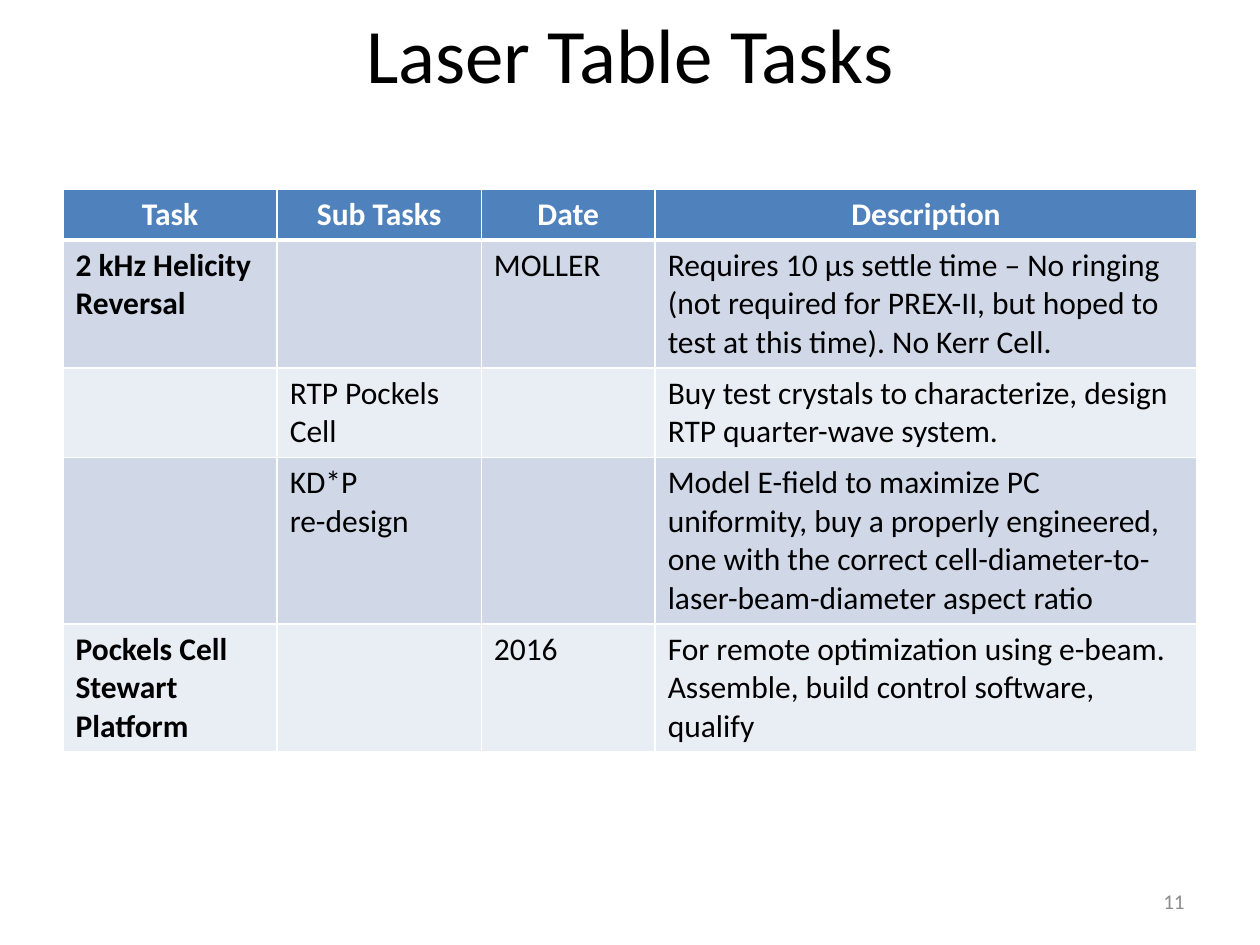
from lxml.etree import SubElement
from pptx import Presentation
from pptx.dml.color import RGBColor
from pptx.enum.text import MSO_ANCHOR, PP_ALIGN
from pptx.oxml.ns import qn
from pptx.util import Inches, Pt

TITLE = "Laser Table Tasks"
SLIDE_NUMBER = "11"
COLUMN_WIDTHS = [1.7, 1.62, 1.38, 4.3]
ROW_HEIGHTS = [0.39, 0.83, 0.51, 1.28, 0.73]
ROWS = [
    ["Task", "Sub Tasks", "Date", "Description"],
    ["2 kHz Helicity Reversal", "", "MOLLER",
     "Requires 10 µs settle time – No ringing\n"
     "(not required for PREX-II, but hoped to test at this time). No Kerr Cell."],
    ["", "RTP Pockels Cell", "",
     "Buy test crystals to characterize, design RTP quarter-wave system."],
    ["", "KD*P\nre-design", "",
     "Model E-field to maximize PC uniformity, buy a properly engineered, "
     "one with the correct cell-diameter-to-laser-beam-diameter aspect ratio"],
    ["Pockels Cell Stewart Platform", "", "2016",
     "For remote optimization using e-beam.\nAssemble, build control software, qualify"],
]
HEADER_FILL = "4F81BD"
BAND_FILLS = ["D0D8E8", "E9EDF4"]
BORDER_COLOR = "FFFFFF"
TITLE_FORMAT = {"size": Pt(44), "name": "Calibri", "bold": False}
CELL_FORMAT = {"size": Pt(18), "name": "Calibri"}
NUMBER_FORMAT = {"size": Pt(12), "name": "Calibri"}


def color(value):
    return RGBColor.from_string(value)


def write_text(text_frame, text, text_color, alignment, font_format):
    text_frame.text = text
    for paragraph in text_frame.paragraphs:
        paragraph.alignment = alignment
        paragraph.font.color.rgb = color(text_color)
        for name, value in font_format.items():
            setattr(paragraph.font, name, value)


def add_borders(cell, bottom_width, top_width):
    properties = cell._tc.get_or_add_tcPr()
    widths = {"a:lnL": 1, "a:lnR": 1, "a:lnT": top_width, "a:lnB": bottom_width}
    for tag, width in widths.items():
        line = SubElement(properties, qn(tag), w=str(Pt(width)))
        fill = SubElement(line, qn("a:solidFill"))
        SubElement(fill, qn("a:srgbClr"), val=BORDER_COLOR)


def add_title(slide):
    title = slide.shapes.title
    box = {"left": 0.5, "top": 0, "width": 9, "height": 0.83}
    for name, value in box.items():
        setattr(title, name, Inches(value))
    title.text_frame.vertical_anchor = MSO_ANCHOR.MIDDLE
    write_text(title.text_frame, TITLE, "000000", PP_ALIGN.CENTER, TITLE_FORMAT)


def add_task_table(slide):
    table = slide.shapes.add_table(
        len(ROWS), len(COLUMN_WIDTHS), Inches(0.5), Inches(1.5),
        Inches(sum(COLUMN_WIDTHS)), Inches(sum(ROW_HEIGHTS))).table
    for column, width in zip(table.columns, COLUMN_WIDTHS):
        column.width = Inches(width)
    for row, height in zip(table.rows, ROW_HEIGHTS):
        row.height = Inches(height)
    for row_index, texts in enumerate(ROWS):
        header = row_index == 0
        fill = HEADER_FILL if header else BAND_FILLS[(row_index - 1) % 2]
        for column_index, text in enumerate(texts):
            cell = table.cell(row_index, column_index)
            add_borders(cell, 3 if header else 1, 3 if row_index == 1 else 1)
            cell.fill.solid()
            cell.fill.fore_color.rgb = color(fill)
            write_text(cell.text_frame, text,
                       "FFFFFF" if header else "000000",
                       PP_ALIGN.CENTER if header else PP_ALIGN.LEFT,
                       {**CELL_FORMAT, "bold": header or column_index == 0})


def add_slide_number(slide):
    box = slide.shapes.add_textbox(Inches(7.17), Inches(6.95), Inches(2.33), Inches(0.4))
    box.text_frame.word_wrap = True
    box.text_frame.vertical_anchor = MSO_ANCHOR.MIDDLE
    write_text(box.text_frame, SLIDE_NUMBER, "8C8C8C", PP_ALIGN.RIGHT, NUMBER_FORMAT)


def main():
    """Build the laser table tasks slide."""
    presentation = Presentation()
    presentation.slide_width = Inches(10)
    presentation.slide_height = Inches(7.5)
    slide = presentation.slides.add_slide(presentation.slide_layouts[5])
    add_title(slide)
    add_task_table(slide)
    add_slide_number(slide)
    presentation.save("out.pptx")


if __name__ == "__main__":
    main()
